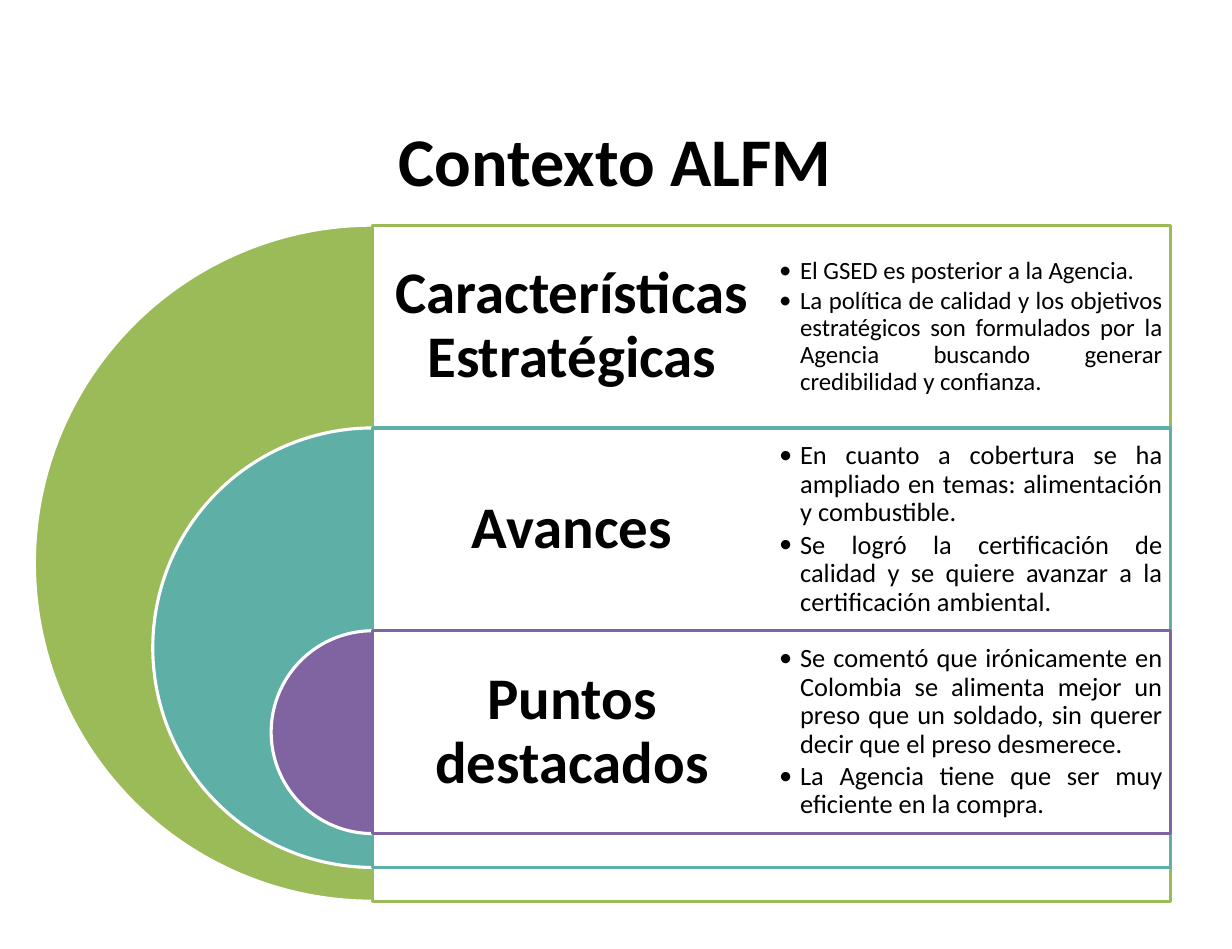
from lxml import etree
from pptx import Presentation
from pptx.dml.color import RGBColor
from pptx.enum.shapes import MSO_SHAPE
from pptx.enum.text import MSO_ANCHOR, PP_ALIGN
from pptx.oxml.ns import qn
from pptx.util import Pt

PIE, RECTANGLE = MSO_SHAPE.PIE, MSO_SHAPE.RECTANGLE
MIDDLE = MSO_ANCHOR.MIDDLE
CENTER, JUSTIFY = PP_ALIGN.CENTER, PP_ALIGN.JUSTIFY

BLACK = RGBColor(0x00, 0x00, 0x00)
WHITE = RGBColor(0xFF, 0xFF, 0xFF)
GREEN = RGBColor(0x9B, 0xBB, 0x59)
TEAL = RGBColor(0x5E, 0xAF, 0xA6)
PURPLE = RGBColor(0x80, 0x64, 0xA2)

AXIS = 240.2
FIRST_TOP = 145.2
ROW_HEIGHT = 130.8
BOTTOM_STEP = 21.8
COLUMN_WIDTH = 257.1
LARGEST_HEIGHT = 3 * ROW_HEIGHT + 2 * BOTTOM_STEP

TOPICS = [
    ("Características Estratégicas", GREEN, 16, [
        "El GSED es posterior a la Agencia.",
        "La política de calidad y los objetivos estratégicos son formulados "
        "por la Agencia buscando generar credibilidad y confianza."]),
    ("Avances", TEAL, 17, [
        "En cuanto a cobertura se ha ampliado en temas: alimentación y combustible. ",
        "Se logró la certificación de calidad y se quiere avanzar a la "
        "certificación ambiental. "]),
    ("Puntos destacados", PURPLE, 17, [
        "Se comentó que irónicamente en Colombia se alimenta mejor un preso que "
        "un soldado, sin querer decir que el preso desmerece. ",
        "La Agencia tiene que ser muy eficiente en la compra. "]),
]

deck = Presentation()
deck.slide_width, deck.slide_height = Pt(794.16), Pt(612)
slide = deck.slides.add_slide(deck.slide_layouts[5])


def add_outline(kind, left, top, width, height, fill, line):
    shape = slide.shapes.add_shape(kind, Pt(left), Pt(top), Pt(width), Pt(height))
    shape.shadow.inherit = False
    shape.fill.solid()
    shape.fill.fore_color.rgb = fill
    shape.line.color.rgb = line
    shape.line.width = Pt(2)
    return shape


def add_cell(left, top, inset, lines, size, bold, align):
    cell = slide.shapes.add_textbox(Pt(left), Pt(top), Pt(COLUMN_WIDTH), Pt(ROW_HEIGHT))
    frame = cell.text_frame
    frame.word_wrap = True
    frame.vertical_anchor = MIDDLE
    frame.margin_left = frame.margin_right = Pt(inset)
    frame.margin_top = frame.margin_bottom = Pt(inset)
    frame.text = "\n".join(lines)
    for paragraph in frame.paragraphs:
        paragraph.alignment = align
        paragraph.line_spacing = 0.9
        for run in paragraph.runs:
            run.font.name = "Calibri"
            run.font.size = Pt(size)
            run.font.bold = bold
            run.font.color.rgb = BLACK
    return frame


for row, (topic, color, point_size, points) in enumerate(TOPICS):
    top = FIRST_TOP + row * ROW_HEIGHT
    height = LARGEST_HEIGHT - row * (ROW_HEIGHT + BOTTOM_STEP)
    half_disc = add_outline(PIE, AXIS - height / 2, top, height, height, color, WHITE)
    half_disc.adjustments[0] = 54
    half_disc.adjustments[1] = 162
    add_outline(RECTANGLE, AXIS, top, 2 * COLUMN_WIDTH, height, WHITE, color)
    add_cell(AXIS, top, 11.5, [topic], 38, True, CENTER)
    point_list = add_cell(AXIS + COLUMN_WIDTH, top, 5, points, point_size, False, JUSTIFY)
    for point in point_list.paragraphs:
        point.space_after = Pt(2.5)
        properties = point._p.get_or_add_pPr()
        properties.set("marL", str(Pt(13.5)))
        properties.set("indent", str(-Pt(13.5)))
        etree.SubElement(properties, qn("a:buFont")).set("typeface", "Calibri")
        etree.SubElement(properties, qn("a:buChar")).set("char", "•")

title = slide.shapes.title
title.left, title.top, title.width, title.height = Pt(18), Pt(51.8), Pt(757.4), Pt(102)
title.text_frame.text = "Contexto ALFM"
title.text_frame.vertical_anchor = MIDDLE
heading = title.text_frame.paragraphs[0]
heading.alignment = CENTER
heading_font = heading.runs[0].font
heading_font.name = "Calibri"
heading_font.size = Pt(44)
heading_font.bold = True
heading_font.color.rgb = BLACK

deck.save("out.pptx")
